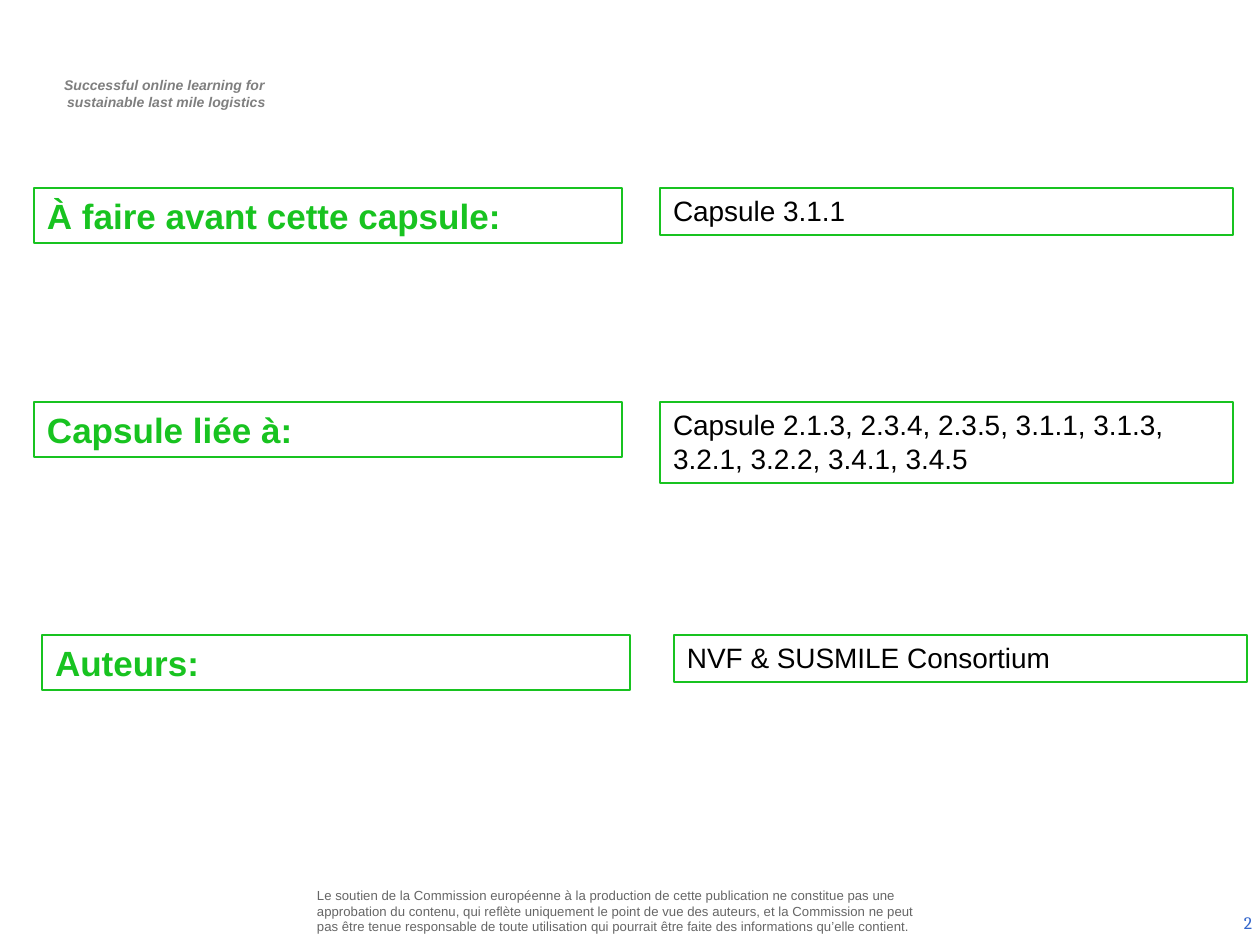
import pptx
import pptx.util
from pptx.dml.color import RGBColor
from pptx.enum.shapes import MSO_SHAPE
from pptx.enum.text import MSO_ANCHOR, MSO_AUTO_SIZE, PP_ALIGN

# Content
HEADER = ["Successful online learning for ", "sustainable last mile logistics"]
DISCLAIMER = (
    "Le soutien de la Commission européenne à la production de cette publication "
    "ne constitue pas une approbation du contenu, qui reflète uniquement le point "
    "de vue des auteurs, et la Commission ne peut pas être tenue responsable de "
    "toute utilisation qui pourrait être faite des informations qu’elle contient."
)
PAGE_NUMBER = "2"
# label, value, top, label left, value left, value height
ROWS = [
    ("À faire avant cette capsule:", "Capsule 3.1.1", 188, 34, 660, 47),
    ("Capsule liée à:",
     "Capsule 2.1.3, 2.3.4, 2.3.5, 3.1.1, 3.1.3, 3.2.1, 3.2.2, 3.4.1, 3.4.5",
     402, 34, 660, 81),
    ("Auteurs:", "NVF & SUSMILE Consortium", 635, 42, 674, 47),
]

COLORS = {"green": "18C320", "black": "000000", "white": "FFFFFF",
          "header": "7F7F7F", "disclaimer": "666666", "number": "3366CC"}
LABEL_W, LABEL_H, VALUE_W = 588, 55, 573
PX = 914400 // 126


def px(n):
    return pptx.util.Emu(n * PX)


def color(name):
    return RGBColor.from_string(COLORS[name])


def write(sp, lines, size, ink, font="Arial", bold=False, italic=False,
          align=PP_ALIGN.LEFT, anchor=MSO_ANCHOR.TOP, inset=(13, 6)):
    tf = sp.text_frame
    tf.text = "\n".join(lines)
    tf.word_wrap = True
    tf.vertical_anchor = anchor
    tf.margin_left = tf.margin_right = px(inset[0])
    tf.margin_top = tf.margin_bottom = px(inset[1])
    for p in tf.paragraphs:
        p.alignment = align
        for r in p.runs:
            r.font.name = font
            r.font.size = pptx.util.Pt(size)
            r.font.bold = bold
            r.font.italic = italic
            r.font.color.rgb = color(ink)
    return tf


def add_text(s, box, lines, size, ink, **style):
    sp = s.shapes.add_textbox(*map(px, box))
    return write(sp, lines, size, ink, **style)


def add_frame(s, box, text, size, ink, bold=False):
    sp = s.shapes.add_shape(MSO_SHAPE.RECTANGLE, *map(px, box))
    sp.shadow.inherit = False
    sp.fill.solid()
    sp.fill.fore_color.rgb = color("white")
    sp.line.color.rgb = color("green")
    sp.line.width = pptx.util.Pt(0.75)
    tf = write(sp, [text], size, ink, bold=bold)
    tf.auto_size = MSO_AUTO_SIZE.SHAPE_TO_FIT_TEXT


prs = pptx.Presentation()
prs.slide_width, prs.slide_height = px(1260), px(945)
s = prs.slides.add_slide(prs.slide_layouts[6])

# Header, disclaimer and page number
tf = add_text(s, (36, 71, 256, 47), HEADER, 8, "header", bold=True, italic=True,
              align=PP_ALIGN.CENTER)
for p in tf.paragraphs:
    p._p.get_or_add_pPr().set("marL", str(px(5)))
add_text(s, (312, 886, 621, 50), [DISCLAIMER], 7.5, "disclaimer",
         anchor=MSO_ANCHOR.MIDDLE, inset=(5, 5))
add_text(s, (971, 898, 294, 50), [PAGE_NUMBER], 10, "number", font="Cambria",
         align=PP_ALIGN.RIGHT, anchor=MSO_ANCHOR.MIDDLE)

# Label and value frames
for label, value, top, label_x, value_x, value_h in ROWS:
    add_frame(s, (label_x, top, LABEL_W, LABEL_H), label, 20, "green", bold=True)
    add_frame(s, (value_x, top, VALUE_W, value_h), value, 16, "black")

prs.save("out.pptx")
